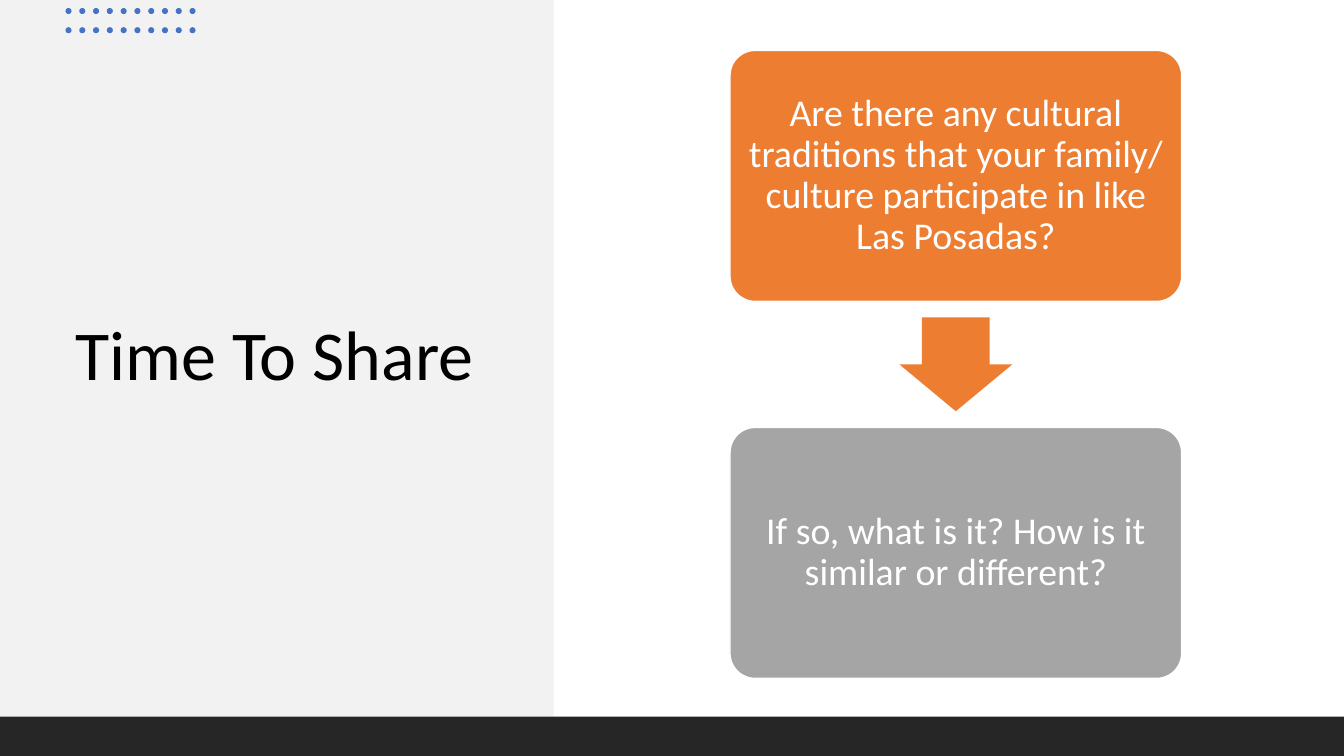
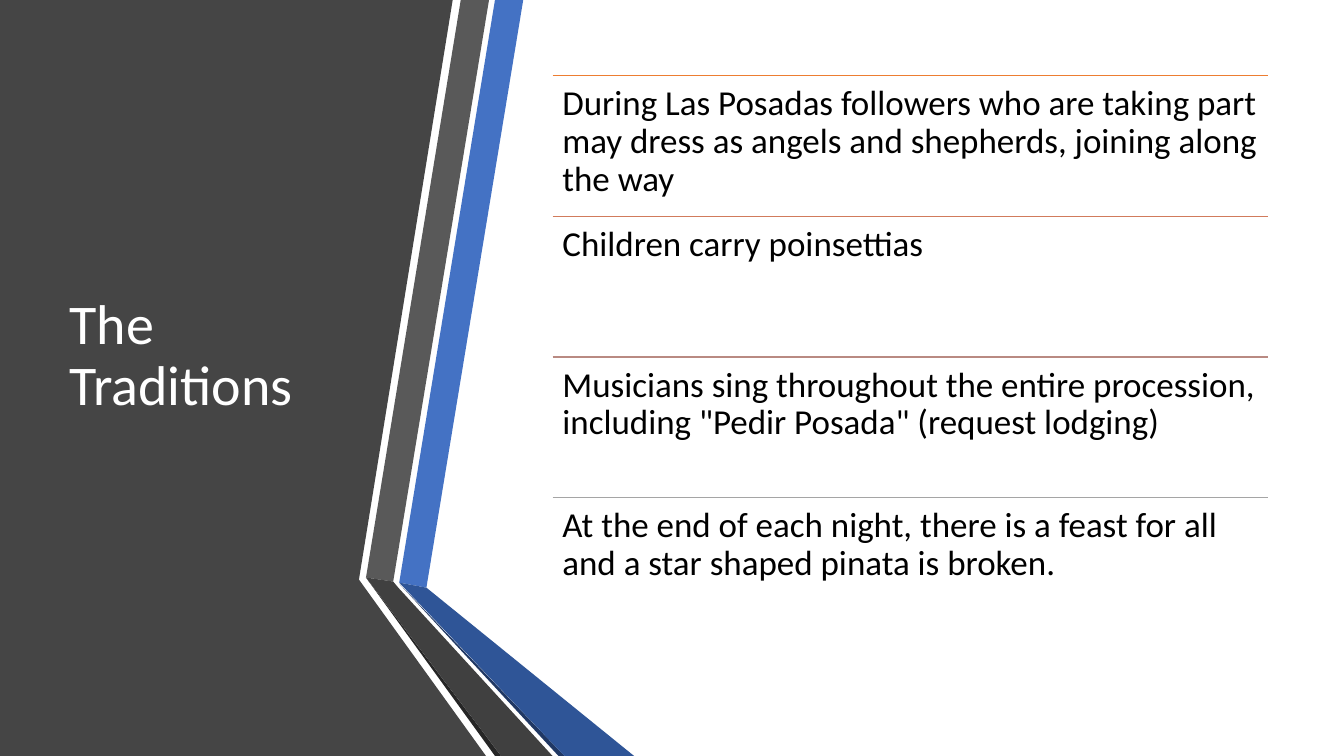
from lxml import etree
from pptx import Presentation
from pptx.dml.color import RGBColor
from pptx.enum.shapes import MSO_CONNECTOR, MSO_SHAPE
from pptx.enum.text import MSO_ANCHOR as Anchor, PP_ALIGN as Align
from pptx.oxml.ns import qn
from pptx.util import Inches, Pt

FONT = "Calibri"
WHITE = RGBColor(0xFF, 0xFF, 0xFF)
BLACK = RGBColor(0x00, 0x00, 0x00)
PALE_GRAY = RGBColor(0xF2, 0xF2, 0xF2)
MID_GRAY = RGBColor(0xA5, 0xA5, 0xA5)
STRIPE_GRAY = RGBColor(0x59, 0x59, 0x59)
PANEL_GRAY = RGBColor(0x45, 0x45, 0x45)
FOLD_GRAY = RGBColor(0x40, 0x40, 0x40)
NEAR_BLACK = RGBColor(0x26, 0x26, 0x26)
BLUE = RGBColor(0x44, 0x72, 0xC4)
FOLD_BLUE = RGBColor(0x2F, 0x55, 0x97)
NAVY = RGBColor(0x20, 0x38, 0x64)
ORANGE = RGBColor(0xED, 0x7D, 0x31)
DUSTY_ORANGE = RGBColor(0xD1, 0x7B, 0x5C)
DUSTY_ROSE = RGBColor(0xB9, 0x8A, 0x82)

presentation = Presentation()
presentation.slide_width = Inches(13.33)
presentation.slide_height = Inches(7.5)
WIDTH, HEIGHT = presentation.slide_width, presentation.slide_height
blank_layout = presentation.slide_layouts[6]


def paint(shape, color):
    """Give the shape a flat fill without outline or shadow."""
    shape.fill.solid()
    shape.fill.fore_color.rgb = color
    shape.line.fill.background()
    shape.shadow.inherit = False


def write(shape, text, size, color, inset=(0.1, 0.05), align=Align.LEFT, anchor=Anchor.MIDDLE):
    """Set wrapped text; inset holds the side and the top/bottom margin in inches."""
    frame = shape.text_frame
    frame.word_wrap = True
    frame.vertical_anchor = anchor
    frame.margin_left = frame.margin_right = Inches(inset[0])
    frame.margin_top = frame.margin_bottom = Inches(inset[1])
    paragraph = frame.paragraphs[0]
    paragraph.text = text
    paragraph.alignment = align
    paragraph.line_spacing = 0.9
    paragraph.font.name = FONT
    paragraph.font.size = Pt(size)
    paragraph.font.color.rgb = color


# Slide 1: questions to share
slide = presentation.slides.add_slide(blank_layout)
shapes = slide.shapes
footer_top = Inches(7.11)

side_panel = shapes.add_shape(MSO_SHAPE.RECTANGLE, 0, 0, Inches(5.49), footer_top)
paint(side_panel, PALE_GRAY)
footer = shapes.add_shape(MSO_SHAPE.RECTANGLE, 0, footer_top, WIDTH, HEIGHT - footer_top)
paint(footer, NEAR_BLACK)

title = shapes.add_textbox(Inches(0.65), Inches(1.32), Inches(4.24), Inches(4.45))
write(title, "Time To Share", 50, BLACK)

dot_size = Inches(0.06)
dot_step = (Inches(1.88) - Inches(0.65)) // 9
for row in range(2):
    for column in range(10):
        dot = shapes.add_shape(
            MSO_SHAPE.OVAL, Inches(0.65) + column * dot_step,
            Inches(0.08) + row * Inches(0.19), dot_size, dot_size)
        paint(dot, BLUE)

card_left, card_top = Inches(7.24), Inches(0.5)
card_width, card_height, card_step = Inches(4.48), Inches(2.49), Inches(3.74)
questions = [
    ("Are there any cultural traditions that your family/ culture participate in like Las Posadas?",
     ORANGE),
    ("If so, what is it? How is it similar or different?", MID_GRAY),
]
for row, (question, color) in enumerate(questions):
    card = shapes.add_shape(MSO_SHAPE.ROUNDED_RECTANGLE, card_left, card_top + row * card_step,
                            card_width, card_height)
    card.adjustments[0] = 0.1
    paint(card, color)
    card.line.color.rgb = WHITE
    card.line.width = Pt(1)
    write(card, question, 27, WHITE, inset=(0.11, 0.11), align=Align.CENTER)

arrow_width, arrow_height = Inches(1.12), Inches(0.93)
arrow = shapes.add_shape(
    MSO_SHAPE.DOWN_ARROW, card_left + (card_width - arrow_width) // 2,
    card_top + (card_height + card_step - arrow_height) // 2, arrow_width, arrow_height)
arrow.adjustments[0] = 0.6
arrow.adjustments[1] = 0.5
paint(arrow, ORANGE)

# Slide 2: the traditions
slide = presentation.slides.add_slide(blank_layout)
shapes = slide.shapes

folded_bands = [
    (PANEL_GRAY, [(0, 0), (4.49, 0), (3.56, 5.75), (4.82, 7.5), (0, 7.5)]),
    (BLUE, [(3.96, 5.78), (4.23, 5.83), (5.19, 0), (4.91, 0)]),
    (STRIPE_GRAY, [(4.85, 0), (4.57, 0), (3.63, 5.73), (3.9, 5.77)]),
    (NEAR_BLACK, [(3.63, 5.73), (4.91, 7.5), (4.97, 7.5)]),
    (NAVY, [(3.96, 5.79), (5.54, 7.5), (5.6, 7.5)]),
    (FOLD_BLUE, [(3.96, 5.78), (5.6, 7.5), (6.29, 7.5), (4.23, 5.83)]),
    (FOLD_GRAY, [(5.48, 7.5), (3.95, 5.83), (3.9, 5.77), (3.63, 5.73), (4.97, 7.5)]),
]
for color, corners in folded_bands:
    start, *others = [(Inches(x), Inches(y)) for x, y in corners]
    builder = shapes.build_freeform(*start)
    builder.add_line_segments(others, close=True)
    paint(builder.convert_to_shape(), color)

title = shapes.add_textbox(Inches(0.59), Inches(0.75), Inches(3.04), Inches(5.58))
write(title, "The Traditions", 40, WHITE)

list_left, list_top = Inches(5.48), Inches(0.75)
list_width, row_height = Inches(7.1), Inches(5.58) // 4
traditions = [
    ("During Las Posadas followers who are taking part may dress as angels and shepherds, "
     "joining along the way", ORANGE),
    ("Children carry poinsettias", DUSTY_ORANGE),
    ('Musicians sing throughout the entire procession, including "Pedir Posada" (request lodging)',
     DUSTY_ROSE),
    ("At the end of each night, there is a feast for all and a star shaped pinata is broken.",
     MID_GRAY),
]
for row, (tradition, color) in enumerate(traditions):
    top = list_top + row * row_height
    rule = shapes.add_connector(MSO_CONNECTOR.STRAIGHT, list_left, top, list_left + list_width, top)
    rule.line.color.rgb = color
    rule.line.width = Pt(1)
    etree.SubElement(rule._element.spPr, qn("a:effectLst"))
    entry = shapes.add_textbox(list_left, top, list_width, row_height)
    write(entry, tradition, 25, BLACK, inset=(0.1, 0.1), anchor=Anchor.TOP)

presentation.save("out.pptx")
